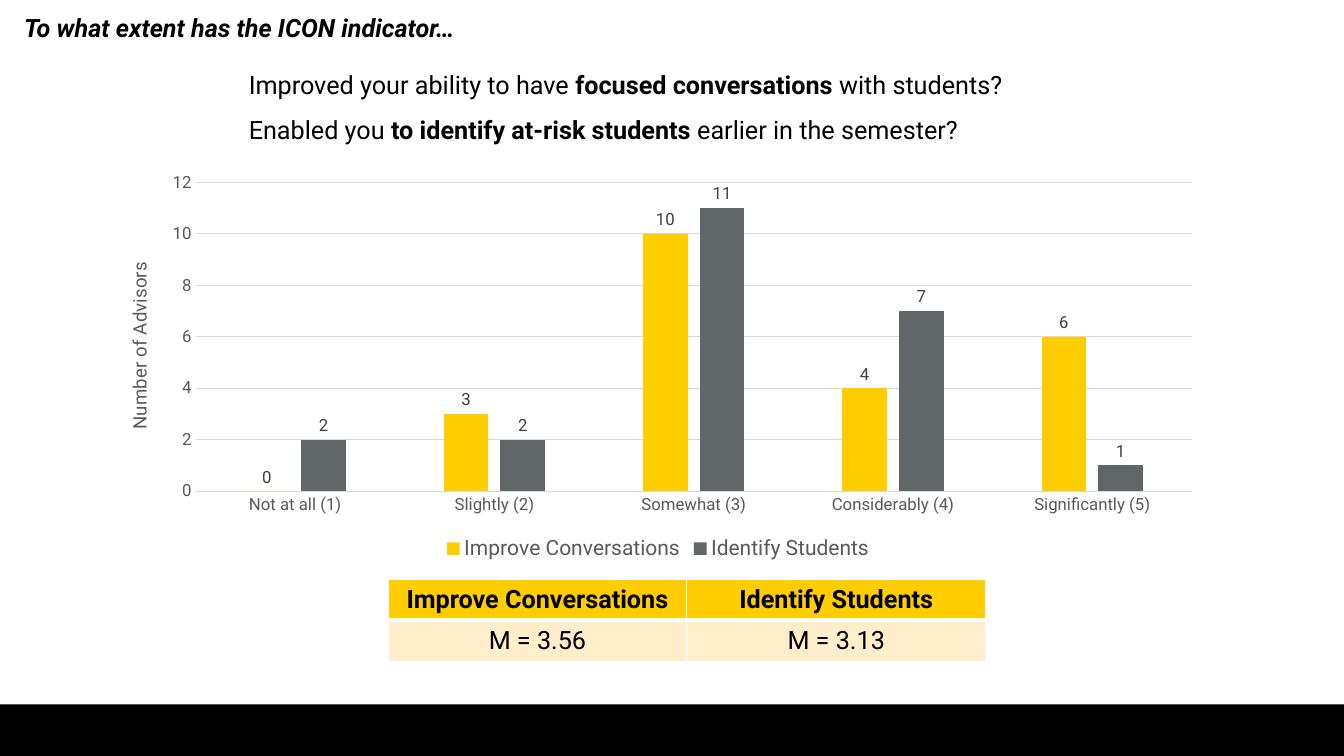
"""Build the slide on how far the ICON indicator helped advisors."""
import dataclasses

import lxml.etree
import pptx
import pptx.chart.data
import pptx.dml.color
import pptx.enum.chart
import pptx.enum.shapes
import pptx.enum.text
import pptx.oxml
import pptx.oxml.ns
import pptx.util

Cm = pptx.util.Cm
Pt = pptx.util.Pt
qn = pptx.oxml.ns.qn


@dataclasses.dataclass(frozen=True)
class Theme:
    """Hold the colours, the font and the type sizes."""

    font: str = "Roboto"
    ink: str = "000000"
    paper: str = "FFFFFF"
    gold: str = "FFCD00"
    cream: str = "FFEDCC"
    slate: str = "616669"
    axis: str = "595959"
    label: str = "404040"
    grid: str = "D9D9D9"
    body: float = 18
    legend: float = 15
    axis_title: float = 13.3
    tick: float = 12


THEME = Theme()


def rgb(colour):
    """Return a colour object for a hex string."""
    return pptx.dml.color.RGBColor.from_string(colour)


def style(font, size=THEME.body, colour=THEME.ink, bold=False, italic=False):
    """Apply the theme font with the given format."""
    font.name = THEME.font
    font.size = Pt(size)
    font.color.rgb = rgb(colour)
    font.bold = bold
    font.italic = italic


def write(paragraph, text, **text_format):
    """Add a formatted run to a paragraph."""
    run = paragraph.add_run()
    run.text = text
    style(run.font, **text_format)


def place(parent, after, **fractions):
    """Give a chart part a manual layout, in fractions of the chart."""
    for old in parent.findall(qn("c:layout")):
        parent.remove(old)
    layout = lxml.etree.Element(qn("c:layout"))
    manual = lxml.etree.SubElement(layout, qn("c:manualLayout"))
    if "w" in fractions:
        lxml.etree.SubElement(manual, qn("c:layoutTarget"), val="inner")
    for side in ("x", "y"):
        lxml.etree.SubElement(manual, qn(f"c:{side}Mode"), val="edge")
    for key, value in fractions.items():
        lxml.etree.SubElement(manual, qn(f"c:{key}"), val=str(value))
    parent.insert(after, layout)


class SlideBuilder:
    """Draw each kind of element on one slide in the theme's style."""

    def __init__(self, slide, theme):
        """Keep the slide and the theme."""
        self.shapes = slide.shapes
        self.theme = theme

    def band(self, left, top, width, height, colour):
        """Draw a plain filled rectangle."""
        band = self.shapes.add_shape(
            pptx.enum.shapes.MSO_SHAPE.RECTANGLE, Cm(left), Cm(top), Cm(width), Cm(height))
        band.shadow.inherit = False
        band.fill.solid()
        band.fill.fore_color.rgb = rgb(colour)
        band.line.fill.background()

    def text(self, left, top, width, height, lines, spacing=1.0, inset=None, middle=False):
        """Write lines made of (text, format) pieces."""
        frame = self.shapes.add_textbox(Cm(left), Cm(top), Cm(width), Cm(height)).text_frame
        frame.word_wrap = True
        if middle:
            frame.vertical_anchor = pptx.enum.text.MSO_ANCHOR.MIDDLE
        if inset is not None:
            frame.margin_left = frame.margin_right = Cm(inset)
            frame.margin_top = frame.margin_bottom = Cm(inset)
        paragraph = frame.paragraphs[0]
        paragraph.line_spacing = spacing
        for number, pieces in enumerate(lines):
            if number:
                paragraph.add_line_break()
            for words, text_format in pieces:
                write(paragraph, words, **text_format)

    def columns(self, left, top, width, height, categories, series, value_title):
        """Draw a clustered column chart with value labels."""
        theme = self.theme
        data = pptx.chart.data.CategoryChartData()
        data.categories = categories
        for name, values, _ in series:
            data.add_series(name, values)
        chart = self.shapes.add_chart(
            pptx.enum.chart.XL_CHART_TYPE.COLUMN_CLUSTERED,
            Cm(left), Cm(top), Cm(width), Cm(height), data).chart
        style(chart.font, theme.tick, theme.axis)
        chart.has_title = False
        chart.has_legend = True
        chart.legend.position = pptx.enum.chart.XL_LEGEND_POSITION.BOTTOM
        chart.legend.include_in_layout = False
        style(chart.legend.font, theme.legend, theme.axis)

        plot = chart.plots[0]
        plot.vary_by_categories = False
        plot.gap_width = 219
        plot.overlap = -27
        for bars, (_, _, colour) in zip(plot.series, series):
            bars.format.fill.solid()
            bars.format.fill.fore_color.rgb = rgb(colour)
            labels = bars.data_labels
            labels.show_value = True
            labels.position = pptx.enum.chart.XL_LABEL_POSITION.OUTSIDE_END
            style(labels.font, theme.tick, theme.label)

        answers, counts = chart.category_axis, chart.value_axis
        for axis in (answers, counts):
            axis.major_tick_mark = pptx.enum.chart.XL_TICK_MARK.NONE
            axis.minor_tick_mark = pptx.enum.chart.XL_TICK_MARK.NONE
            style(axis.tick_labels.font, theme.tick, theme.axis)
        counts.minimum_scale, counts.maximum_scale, counts.major_unit = 0, 12, 2
        counts.format.line.fill.background()
        for line in (answers.format.line, counts.major_gridlines.format.line):
            line.color.rgb = rgb(theme.grid)
            line.width = Pt(0.75)

        frame = counts.axis_title.text_frame
        write(frame.paragraphs[0], value_title, size=theme.axis_title, colour=theme.axis)
        title = counts._element.find(qn("c:title"))
        turned = title.find(".//" + qn("a:bodyPr"))
        turned.set("rot", "-5400000")
        turned.set("vert", "horz")
        place(title, 1, x=0.02, y=0.235)
        plot_area = chart._chartSpace.find(".//" + qn("c:plotArea"))
        place(plot_area, 0, x=0.085, y=0.045, w=0.894, h=0.77)

    def border(self, cell, **widths):
        """Draw white cell borders, given in schema order by side."""
        properties = cell._tc.get_or_add_tcPr()
        for position, (side, width) in enumerate(widths.items()):
            line = lxml.etree.Element(qn(f"a:ln{side}"), w=str(Pt(width)))
            fill = lxml.etree.SubElement(line, qn("a:solidFill"))
            lxml.etree.SubElement(fill, qn("a:srgbClr"), val=self.theme.paper)
            properties.insert(position, line)

    def table(self, left, top, width, height, rows):
        """Draw a table with a gold header and cream body."""
        table = self.shapes.add_table(
            len(rows), len(rows[0]), Cm(left), Cm(top), Cm(width), Cm(height)).table
        for r, values in enumerate(rows):
            header = r == 0
            for c, value in enumerate(values):
                cell = table.cell(r, c)
                cell.vertical_anchor = pptx.enum.text.MSO_ANCHOR.MIDDLE
                cell.fill.solid()
                cell.fill.fore_color.rgb = rgb(self.theme.gold if header else self.theme.cream)
                self.border(cell, L=1, R=1, T=1 if header else 3, B=3 if header else 1)
                paragraph = cell.text_frame.paragraphs[0]
                paragraph.alignment = pptx.enum.text.PP_ALIGN.CENTER
                write(paragraph, value, bold=header)


def main():
    """Build the slide and save it."""
    deck = pptx.Presentation()
    deck.slide_width, deck.slide_height = Cm(33.87), Cm(19.05)
    builder = SlideBuilder(deck.slides.add_slide(deck.slide_layouts[6]), THEME)
    conversations, students = "Improve Conversations", "Identify Students"
    builder.band(0, 17.75, 33.87, 1.3, THEME.ink)
    builder.table(9.78, 14.6, 15.06, 2.06, [
        (conversations, students), ("M = 3.56", "M = 3.13")])
    builder.columns(
        2.54, 4.14, 28.09, 10.11,
        ["Not at all (1)", "Slightly (2)", "Somewhat (3)", "Considerably (4)",
         "Significantly (5)"],
        [(conversations, (0, 3, 10, 4, 6), THEME.gold),
         (students, (2, 2, 11, 7, 1), THEME.slate)],
        "Number of Advisors")
    plain, strong = {}, {"bold": True}
    builder.text(6.27, 1.19, 21.34, 2.64, [
        [("Improved your ability to have ", plain), ("focused conversations ", strong),
         ("with students?", plain)],
        [("Enabled you ", plain), ("to identify at-risk students ", strong),
         ("earlier in the semester?", plain)],
    ], spacing=1.5, inset=0, middle=True)
    builder.text(0.36, 0.18, 16.94, 1.02, [
        [("To what extent has the ICON indicator…", {"bold": True, "italic": True})]])
    deck.save("out.pptx")


if __name__ == "__main__":
    main()
